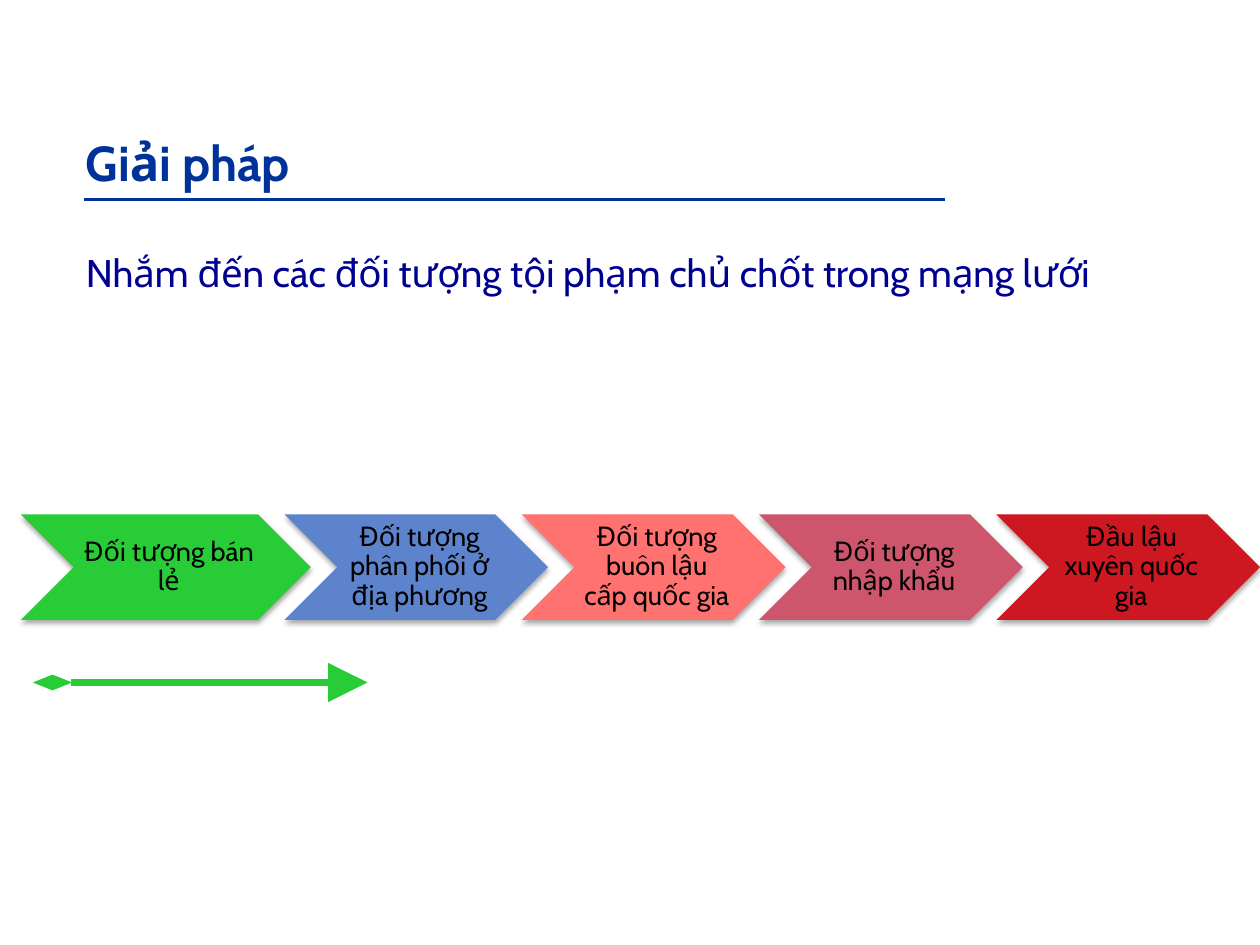
from lxml.etree import SubElement
from pptx import Presentation
from pptx.dml.color import RGBColor
from pptx.enum.shapes import MSO_CONNECTOR, MSO_SHAPE
from pptx.enum.text import MSO_ANCHOR, PP_ALIGN
from pptx.oxml.ns import qn
from pptx.util import Pt

FONT = "Cabin"
COLORS = {
    "title": "003399", "lead": "000090", "text": "000000",
    "green": "28CC37", "blue": "5C83CC", "coral": "FF726F",
    "rose": "CD566D", "red": "CD1821",
}
STAGES = [
    ("Đối tượng bán lẻ", "green"),
    ("Đối tượng phân phối ở địa phương", "blue"),
    ("Đối tượng buôn lậu cấp quốc gia", "coral"),
    ("Đối tượng nhập khẩu", "rose"),
    ("Đầu lậu xuyên quốc gia", "red"),
]


def color(name):
    return RGBColor.from_string(COLORS[name])


def add_text(slide, text, box, size, tint="text", bold=False, wrap=True,
             align=PP_ALIGN.LEFT, anchor=MSO_ANCHOR.TOP,
             inset=(7.2, 3.6, 7.2, 3.6), before=0, after=0, spacing=1.0):
    frame = slide.shapes.add_textbox(*map(Pt, box)).text_frame
    frame.word_wrap = wrap
    frame.vertical_anchor = anchor
    (frame.margin_left, frame.margin_top,
     frame.margin_right, frame.margin_bottom) = map(Pt, inset)
    para = frame.paragraphs[0]
    para.alignment = align
    para.line_spacing = spacing
    para.space_before, para.space_after = Pt(before), Pt(after)
    run = para.add_run()
    run.text = text
    font = run.font
    font.name, font.size, font.bold = FONT, Pt(size), bold
    font.color.rgb = color(tint)


def add_line(slide, start, end, tint, width):
    line = slide.shapes.add_connector(
        MSO_CONNECTOR.STRAIGHT, *map(Pt, start + end))
    line.line.color.rgb = color(tint)
    line.line.width = Pt(width)
    SubElement(line._element.spPr, qn("a:effectLst"))
    return line


def add_shadow(shape):
    shape.shadow.inherit = False
    effects = shape._element.spPr.find(qn("a:effectLst"))
    outer = SubElement(effects, qn("a:outerShdw"), blurRad=str(Pt(3.1)),
                       dist=str(Pt(1.8)), dir="5400000", rotWithShape="0")
    black = SubElement(outer, qn("a:srgbClr"), val="000000")
    SubElement(black, qn("a:alpha"), val="35000")


def add_header(slide, left, top, width):
    add_text(slide, "Giải pháp", (left, top, width, 41), 28,
             tint="title", bold=True, before=5.6)
    add_line(slide, (left + 6, top + 42), (left + 498, top + 42), "title", 2)
    add_text(slide, "Nhắm đến các đối tượng tội phạm chủ chốt trong mạng lưới",
             (left, top + 66.5, 606, 34), 22, tint="lead", wrap=False)


def add_stage(slide, text, tint, left, top, width, height):
    shape = slide.shapes.add_shape(
        MSO_SHAPE.CHEVRON, *map(Pt, (left, top, width, height)))
    shape.fill.solid()
    shape.fill.fore_color.rgb = color(tint)
    shape.line.fill.background()
    add_shadow(shape)
    notch = height / 2
    add_text(slide, text, (left + notch, top, width - height, height), 15.5,
             align=PP_ALIGN.CENTER, anchor=MSO_ANCHOR.MIDDLE,
             inset=(5, 1.5, 1.5, 1.5), after=5.4, spacing=0.9)


def add_chain(slide, left, top, width, height):
    """Overlapping chevrons; the first is wider than the rest."""
    overlap, extra = 15, 15
    count = len(STAGES)
    step = (width - extra - overlap) / count
    for index, (text, tint) in enumerate(STAGES):
        shift = extra if index else 0
        size = step + overlap + extra - shift
        add_stage(slide, text, tint, left + index * step + shift, top,
                  size, height)


def add_arrow(slide, left, top, width):
    arrow = add_line(slide, (left, top), (left + width, top), "green", 4.5)
    line = arrow.line._get_or_add_ln()
    SubElement(line, qn("a:headEnd"), type="diamond", w="sm", len="lg")
    SubElement(line, qn("a:tailEnd"), type="triangle", w="lg", len="lg")


def main():
    deck = Presentation()
    deck.slide_width, deck.slide_height = Pt(720), Pt(540)
    slide = deck.slides.add_slide(deck.slide_layouts[6])
    add_header(slide, 42, 72, 516)
    add_chain(slide, 12, 294, 708, 60.2)
    add_arrow(slide, 30, 390, 180)
    deck.save("out.pptx")


if __name__ == "__main__":
    main()
